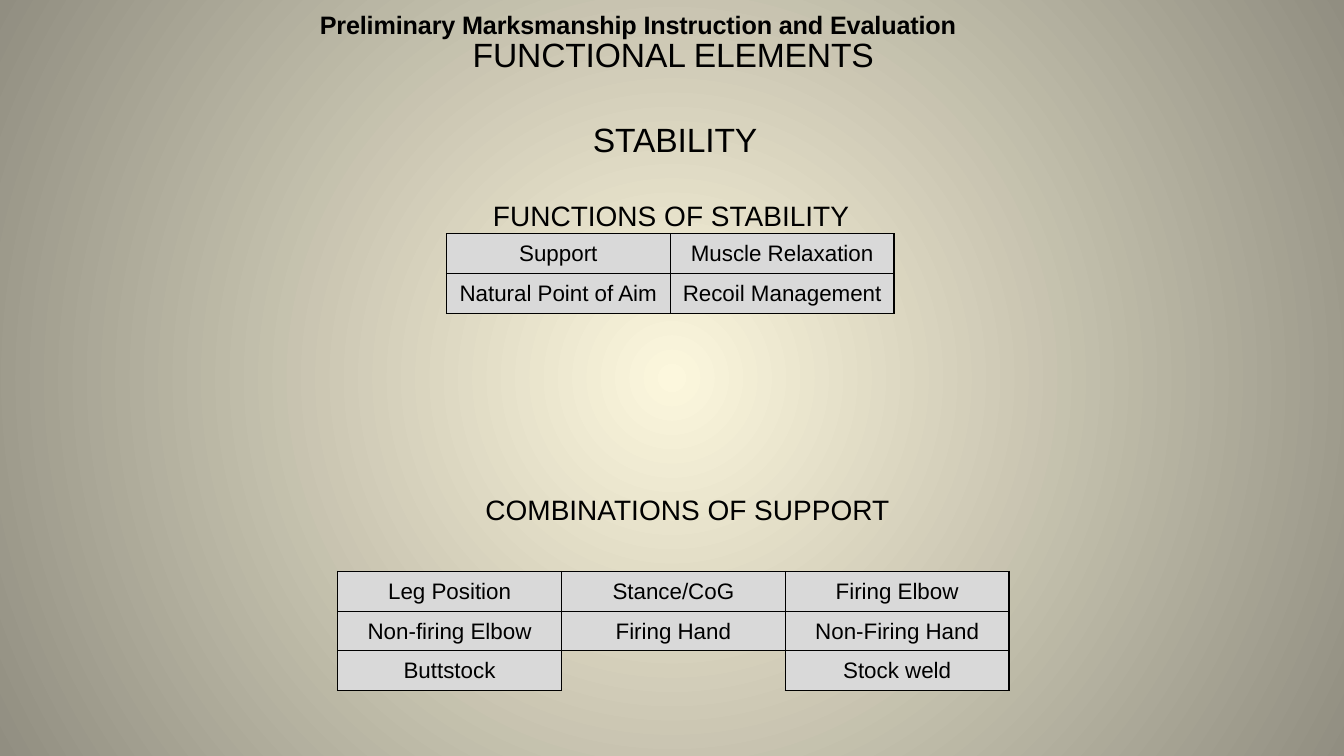
from lxml import etree
from pptx import Presentation
from pptx.dml.color import RGBColor
from pptx.enum.text import MSO_ANCHOR, MSO_AUTO_SIZE, PP_ALIGN
from pptx.oxml import parse_xml
from pptx.oxml.ns import nsdecls, qn
from pptx.util import Cm, Pt

MIDDLE = MSO_ANCHOR.MIDDLE
GROW = MSO_AUTO_SIZE.SHAPE_TO_FIT_TEXT
CENTER = PP_ALIGN.CENTER
NO_STYLE = "{2D5ABB26-0587-4C30-8999-92F81FD0307C}"


def color(value):
    return RGBColor.from_string(value)


def write(frame, text, size=16, bold=False, indent=0, track=0, lead=None):
    """Put one centred line of text into a frame."""
    para = frame.paragraphs[0]
    para.alignment = CENTER
    if indent:
        para._p.get_or_add_pPr().set("marL", str(Cm(indent)))
    if lead:
        para.line_spacing = lead
    run = para.add_run()
    run.text = text
    font = run.font
    font.name, font.size, font.bold = "Arial", Pt(size), bold
    font.color.rgb = color(Deck.ink)
    if track:
        run._r.get_or_add_rPr().set("spc", str(track))


class Deck:
    ink = "000000"
    panel = "D9D9D9"
    glow = ("FCF7DD", "918E81")
    col, row = 5.64, 1.0

    def __init__(self, slide):
        self.slide = slide

    def back(self):
        """Fill the background from the centre outwards."""
        fill = self.slide.background.fill
        fill.gradient()
        for stop, place, tone in zip(fill.gradient_stops, (0, 1), self.glow):
            stop.position = place
            stop.color.rgb = color(tone)
        grad = next(self.slide.element.iter(qn("a:gradFill")))
        grad.remove(grad.find(qn("a:lin")))
        grad.append(parse_xml(
            f'<a:path {nsdecls("a")} path="circle">'
            '<a:fillToRect l="50000" t="50000" r="50000" b="50000"/></a:path>'))

    def text(self, words, left, top, width, height, pad=(0.25, 0.13), **style):
        box = self.slide.shapes.add_textbox(
            Cm(left), Cm(top), Cm(width), Cm(height))
        frame = box.text_frame
        frame.word_wrap = True
        frame.auto_size = GROW
        frame.margin_left = frame.margin_right = Cm(pad[0])
        frame.margin_top = frame.margin_bottom = Cm(pad[1])
        write(frame, words, **style)

    def border(self, cell, sides):
        props = cell._tc.get_or_add_tcPr()
        for side in sides:
            line = etree.SubElement(props, qn(f"a:ln{side}"), w=str(Pt(1)))
            fill = etree.SubElement(line, qn("a:solidFill"))
            etree.SubElement(fill, qn("a:srgbClr"), val=self.ink)

    def table(self, rows, left, top):
        high, wide = len(rows), len(rows[0])
        frame = self.slide.shapes.add_table(
            high, wide, Cm(left), Cm(top),
            Cm(wide * self.col), Cm(high * self.row))
        grid = frame.table
        grid.first_row = grid.horz_banding = False
        next(grid._tbl.iter(qn("a:tableStyleId"))).text = NO_STYLE
        for col in grid.columns:
            col.width = Cm(self.col)
        for row, names in zip(grid.rows, rows):
            row.height = Cm(self.row)
            for cell, name in zip(row.cells, names):
                cell.vertical_anchor = MIDDLE
                cell.margin_left = cell.margin_right = Cm(0.02)
                cell.margin_top, cell.margin_bottom = Cm(0.02), 0
                # An empty cell stays clear and open at the bottom
                self.border(cell, "LRTB" if name else "LRT")
                if name:
                    cell.fill.solid()
                    cell.fill.fore_color.rgb = color(self.panel)
                    write(cell.text_frame, name)
                else:
                    cell.fill.background()


def main():
    show = Presentation()
    show.slide_width, show.slide_height = Cm(33.87), Cm(19.05)
    deck = Deck(show.slides.add_slide(show.slide_layouts[6]))
    deck.back()

    # Titles
    deck.text("Preliminary Marksmanship Instruction and Evaluation",
              5.23, 0.2, 21.69, 0.81, pad=(0, 0),
              size=18, bold=True, track=-10, lead=1.04)
    for words, left, top in (("FUNCTIONAL ELEMENTS", 4.19, 0.84),
                             ("STABILITY", 4.24, 2.97)):
        deck.text(words, left, top, 25.4, 1.07, pad=(0, 0.02),
                  size=24, indent=0.15, track=-10)

    # Table headings
    for words, left, top in (("FUNCTIONS OF STABILITY", 4.24, 4.88),
                             ("COMBINATIONS OF SUPPORT", 4.65, 12.27)):
        deck.text(words, left, top, 25.35, 1.12, size=20)

    # Tables
    deck.table([("Support", "Muscle Relaxation"),
                ("Natural Point of Aim", "Recoil Management")], 11.25, 5.89)
    deck.table([("Leg Position", "Stance/CoG", "Firing Elbow"),
                ("Non-firing Elbow", "Firing Hand", "Non-Firing Hand"),
                ("Buttstock", "", "Stock weld")], 8.51, 14.4)

    show.save("out.pptx")


if __name__ == "__main__":
    main()
